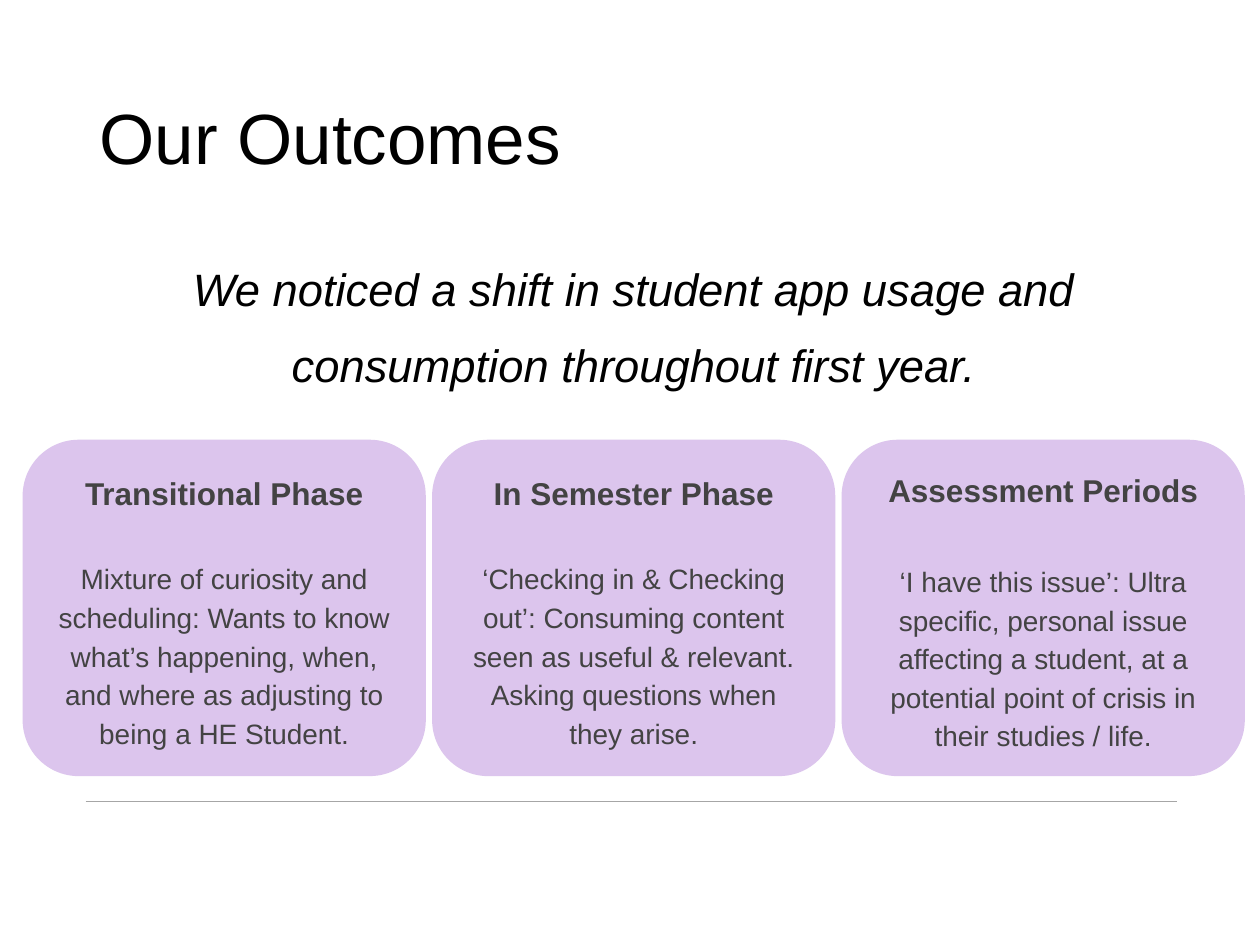
from dataclasses import dataclass

from lxml import etree
from pptx import Presentation
from pptx.dml.color import RGBColor
from pptx.enum.shapes import MSO_CONNECTOR, MSO_SHAPE
from pptx.enum.text import MSO_ANCHOR, PP_ALIGN
from pptx.oxml.ns import qn
from pptx.util import Inches, Pt

STRAIGHT = MSO_CONNECTOR.STRAIGHT
ROUNDED = MSO_SHAPE.ROUNDED_RECTANGLE
MIDDLE, TOP = MSO_ANCHOR.MIDDLE, MSO_ANCHOR.TOP
LEFT, CENTER = PP_ALIGN.LEFT, PP_ALIGN.CENTER


@dataclass(frozen=True)
class Theme:
    font: str = "Arial"
    ink: str = "000000"
    card_ink: str = "434343"
    card_fill: str = "DCC5ED"
    rule: str = "A6A6A6"
    title_size: float = 40.6
    lead_size: float = 25.9
    heading_size: float = 18
    body_size: float = 16


class SlideBuilder:
    """Draw styled elements on the current slide."""

    def __init__(self, slide, theme):
        self.s = slide
        self.theme = theme

    def frame(self, sp, anchor):
        tf = sp.text_frame
        tf.word_wrap = True
        tf.vertical_anchor = anchor
        return tf

    def add_text(self, p, text, size, color, align=CENTER, spacing=1.0, bold=False, italic=False):
        p.alignment = align
        p.line_spacing = spacing
        r = p.add_run()
        r.text = text
        font = r.font
        font.name, font.size = self.theme.font, Pt(size)
        font.bold, font.italic = bold, italic
        font.color.rgb = RGBColor.from_string(color)

    def title(self, text, x, y, w, h):
        sp = self.s.shapes.title
        sp.left, sp.top, sp.width, sp.height = map(Inches, (x, y, w, h))
        p = self.frame(sp, MIDDLE).paragraphs[0]
        self.add_text(p, text, self.theme.title_size, self.theme.ink, LEFT, 0.9)

    def lead(self, text, x, y, w, h):
        sp = self.s.shapes.add_textbox(*map(Inches, (x, y, w, h)))
        p = self.frame(sp, TOP).paragraphs[0]
        self.add_text(p, text, self.theme.lead_size, self.theme.ink, spacing=1.4, italic=True)

    def rule(self, x1, x2, y):
        line = self.s.shapes.add_connector(STRAIGHT, *map(Inches, (x1, y, x2, y)))
        line.line.color.rgb = RGBColor.from_string(self.theme.rule)
        line.line.width = Pt(0.5)
        etree.SubElement(line._element.spPr, qn("a:effectLst"))

    def card(self, heading, body, gap, x, y, w, h):
        sp = self.s.shapes.add_shape(ROUNDED, *map(Inches, (x, y, w, h)))
        sp.shadow.inherit = False
        sp.fill.solid()
        sp.fill.fore_color.rgb = RGBColor.from_string(self.theme.card_fill)
        sp.line.fill.background()
        tf = self.frame(sp, MIDDLE)
        tf.margin_left = tf.margin_right = tf.margin_top = tf.margin_bottom = Inches(0.1)
        color = self.theme.card_ink
        self.add_text(tf.paragraphs[0], heading, self.theme.heading_size, color, spacing=1.2, bold=True)
        p = tf.add_paragraph()
        p.space_before = Pt(gap)
        self.add_text(p, body, self.theme.body_size, color, spacing=1.15)


CARDS = [
    ("Transitional Phase",
     "Mixture of curiosity and scheduling: Wants to know what’s happening, when, "
     "and where as adjusting to being a HE Student.", 26),
    ("In Semester Phase",
     "‘Checking in & Checking out’: Consuming content seen as useful & relevant. "
     "Asking questions when they arise.", 26),
    ("Assessment Periods",
     "‘I have this issue’: Ultra specific, personal issue affecting a student, "
     "at a potential point of crisis in their studies / life.", 29),
]


def main():
    prs = Presentation()
    prs.slide_width, prs.slide_height = Inches(10), Inches(7.5)
    slide = prs.slides.add_slide(prs.slide_layouts[5])
    builder = SlideBuilder(slide, Theme())
    builder.rule(0.68, 9.34, 6.36)
    builder.title("Our Outcomes", 0.69, 0.4, 8.62, 1.45)
    builder.lead("We noticed a shift in student app usage and consumption "
                 "throughout first year.", 0.72, 1.85, 8.62, 1.36)
    left, pitch = 0.18, 3.25
    for i, (heading, body, gap) in enumerate(CARDS):
        builder.card(heading, body, gap, left + i * pitch, 3.49, 3.2, 2.67)
    prs.save("out.pptx")


if __name__ == "__main__":
    main()
